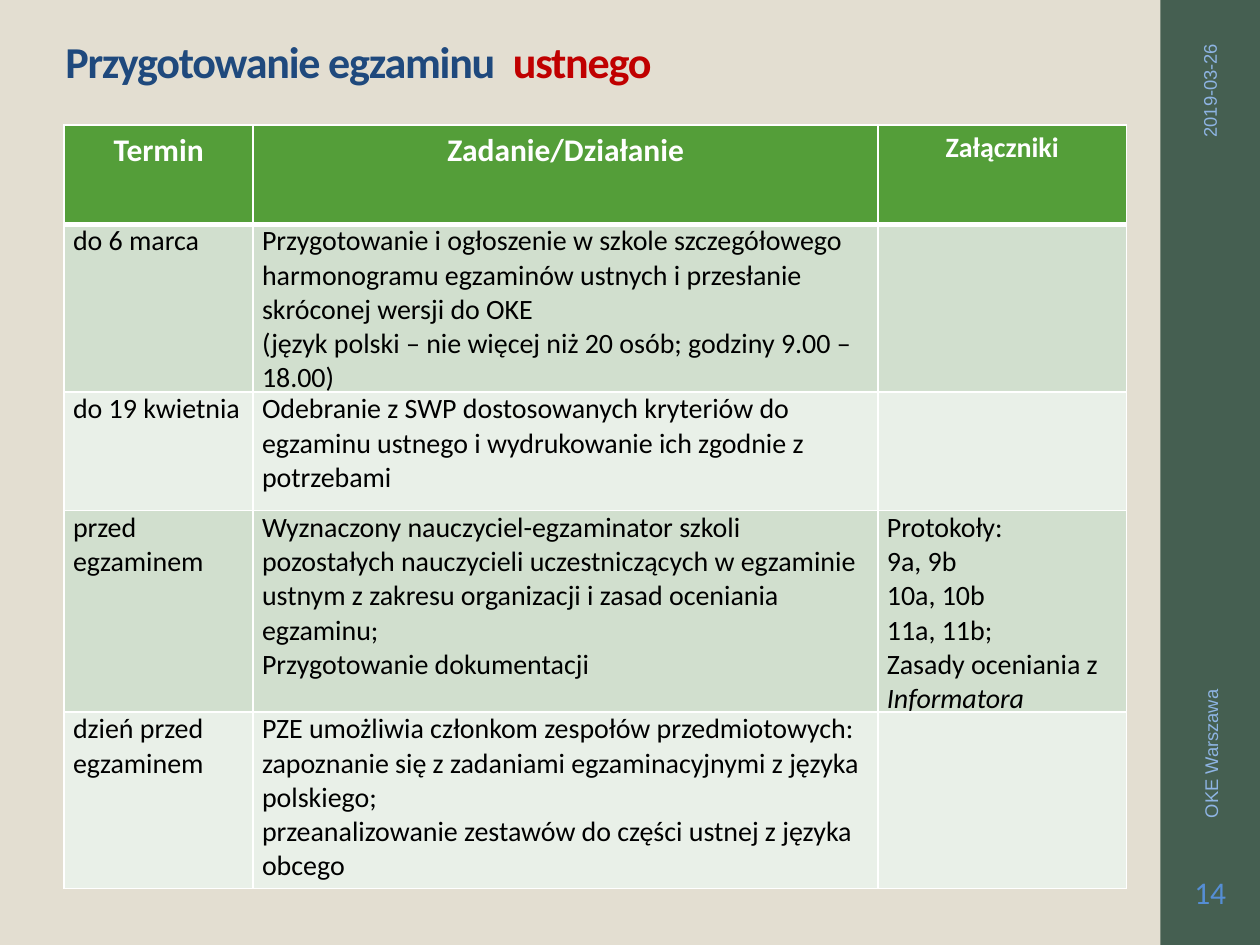
from lxml.etree import SubElement
from pptx import Presentation
from pptx.dml.color import RGBColor
from pptx.enum.shapes import MSO_SHAPE as Shape
from pptx.enum.text import MSO_ANCHOR as Anchor, PP_ALIGN as Align
from pptx.oxml.ns import qn
from pptx.util import Inches, Pt

# Content: a cell is a list of paragraphs, *stars* mark italics
TITLE = [("Przygotowanie egzaminu  ", "1F497D"), ("ustnego", "C00000")]
DATE, OFFICE, NUMBER = "2019-03-26", "OKE Warszawa", "14"
HEAD = [("Termin", 18), ("Zadanie/Działanie", 18), ("Załączniki", 16)]
ROWS = [
    (["do 6 marca"],
     ["Przygotowanie i ogłoszenie w szkole szczegółowego harmonogramu "
      "egzaminów ustnych i przesłanie skróconej wersji do OKE",
      "(język polski – nie więcej niż 20 osób; godziny 9.00 – 18.00)"],
     []),
    (["do 19 kwietnia"],
     ["Odebranie z SWP dostosowanych kryteriów do egzaminu ustnego "
      "i wydrukowanie ich zgodnie z potrzebami"],
     []),
    (["przed egzaminem"],
     ["Wyznaczony nauczyciel-egzaminator szkoli pozostałych nauczycieli "
      "uczestniczących w egzaminie ustnym z zakresu organizacji i zasad "
      "oceniania egzaminu;",
      "Przygotowanie dokumentacji"],
     ["Protokoły:", "9a, 9b", "10a, 10b", "11a, 11b;",
      "Zasady oceniania z *Informatora*"]),
    (["dzień przed egzaminem"],
     ["PZE umożliwia członkom zespołów przedmiotowych:",
      "zapoznanie się z zadaniami egzaminacyjnymi z języka polskiego;",
      "przeanalizowanie zestawów do części ustnej z języka obcego"],
     []),
]
WIDTHS = [1.5, 4.96, 1.97]
HEIGHTS = [0.79, 1.18, 0.94, 0.87, 1.4]
BANDS = ["D1DFCE", "E9F0E8"]
GREEN, WHITE, BLACK = "549E39", "FFFFFF", "000000"


def color(code):
    return RGBColor.from_string(code)


def style(run, size, code, face="Calibri", bold=False, italic=False):
    font = run.font
    font.size, font.name = Pt(size), face
    font.bold, font.italic = bold, italic
    font.color.rgb = color(code)


def add_box(slide, box, anchor, align=Align.LEFT, turn=0):
    shape = slide.shapes.add_textbox(*map(Inches, box))
    shape.rotation = turn
    frame = shape.text_frame
    frame.word_wrap, frame.vertical_anchor = True, anchor
    frame.paragraphs[0].alignment = align
    return frame


def add_label(slide, text, box, align, size, code, face, turn=0):
    frame = add_box(slide, box, Anchor.MIDDLE, align, turn)
    run = frame.paragraphs[0].add_run()
    run.text = text
    style(run, size, code, face)
    return frame


def add_edges(cell, top, bottom):
    props = cell._tc.get_or_add_tcPr()
    for side, width in (("L", 1), ("R", 1), ("T", top), ("B", bottom)):
        line = SubElement(props, qn(f"a:ln{side}"), w=str(Pt(width)))
        fill = SubElement(line, qn("a:solidFill"))
        SubElement(fill, qn("a:srgbClr"), val=WHITE)


def paint(cell, code, top=1, bottom=1):
    add_edges(cell, top, bottom)
    cell.fill.solid()
    cell.fill.fore_color.rgb = color(code)


def fill_body(cell, lines):
    cell.margin_left = cell.margin_right = Inches(0.07)
    cell.margin_top = cell.margin_bottom = 0
    frame = cell.text_frame
    for i, line in enumerate(lines):
        para = frame.add_paragraph() if i else frame.paragraphs[0]
        for j, part in enumerate(line.split("*")):
            if part:
                run = para.add_run()
                run.text = part
                style(run, 16, BLACK, italic=j % 2 == 1)


def add_plan(slide):
    holder = slide.shapes.add_table(
        len(HEIGHTS), len(WIDTHS), Inches(0.51), Inches(0.99),
        Inches(sum(WIDTHS)), Inches(sum(HEIGHTS)))
    table = holder.table
    for col, width in zip(table.columns, WIDTHS):
        col.width = Inches(width)
    for row, height in zip(table.rows, HEIGHTS):
        row.height = Inches(height)
    for c, (text, size) in enumerate(HEAD):
        cell = table.cell(0, c)
        paint(cell, GREEN, bottom=3)
        cell.text_frame.text = text
        para = cell.text_frame.paragraphs[0]
        para.alignment = Align.CENTER
        style(para.runs[0], size, WHITE, bold=True)
    for r, row in enumerate(ROWS, 1):
        for c, lines in enumerate(row):
            cell = table.cell(r, c)
            paint(cell, BANDS[(r - 1) % 2], top=3 if r == 1 else 1)
            fill_body(cell, lines)


def main():
    deck = Presentation()
    deck.slide_width, deck.slide_height = Inches(10), Inches(7.5)
    slide = deck.slides.add_slide(deck.slide_layouts[6])
    slide.background.fill.solid()
    slide.background.fill.fore_color.rgb = color("E3DED1")

    # Side band
    band = slide.shapes.add_shape(
        Shape.RECTANGLE, Inches(9.21), 0, Inches(0.79), Inches(7.5))
    band.shadow.inherit = False
    band.fill.solid()
    band.fill.fore_color.rgb = color("455F51")
    band.line.fill.background()

    # Title
    para = add_box(slide, (0.42, 0.25, 8.67, 0.5), Anchor.BOTTOM).paragraphs[0]
    para.line_spacing = 0.9
    for text, code in TITLE:
        run = para.add_run()
        run.text = text
        style(run, 25.2, code, bold=True)
        run.font._element.set("spc", "-70")

    # Date, office and page number on the band
    add_label(slide, DATE, (8.56, 1.14, 2.08, 0.3), Align.RIGHT,
              10.5, "8EB4E3", "Arial", 270)
    add_label(slide, OFFICE, (7.65, 4.48, 3.92, 0.3), Align.LEFT,
              10.5, "8EB4E3", "Arial", 270)
    page = add_label(slide, NUMBER, (9.23, 6.75, 0.75, 0.65), Align.CENTER,
                     18, "558ED5", "Calibri")
    page.margin_left = page.margin_right = Inches(0.03)

    add_plan(slide)
    deck.save("out.pptx")


if __name__ == "__main__":
    main()
